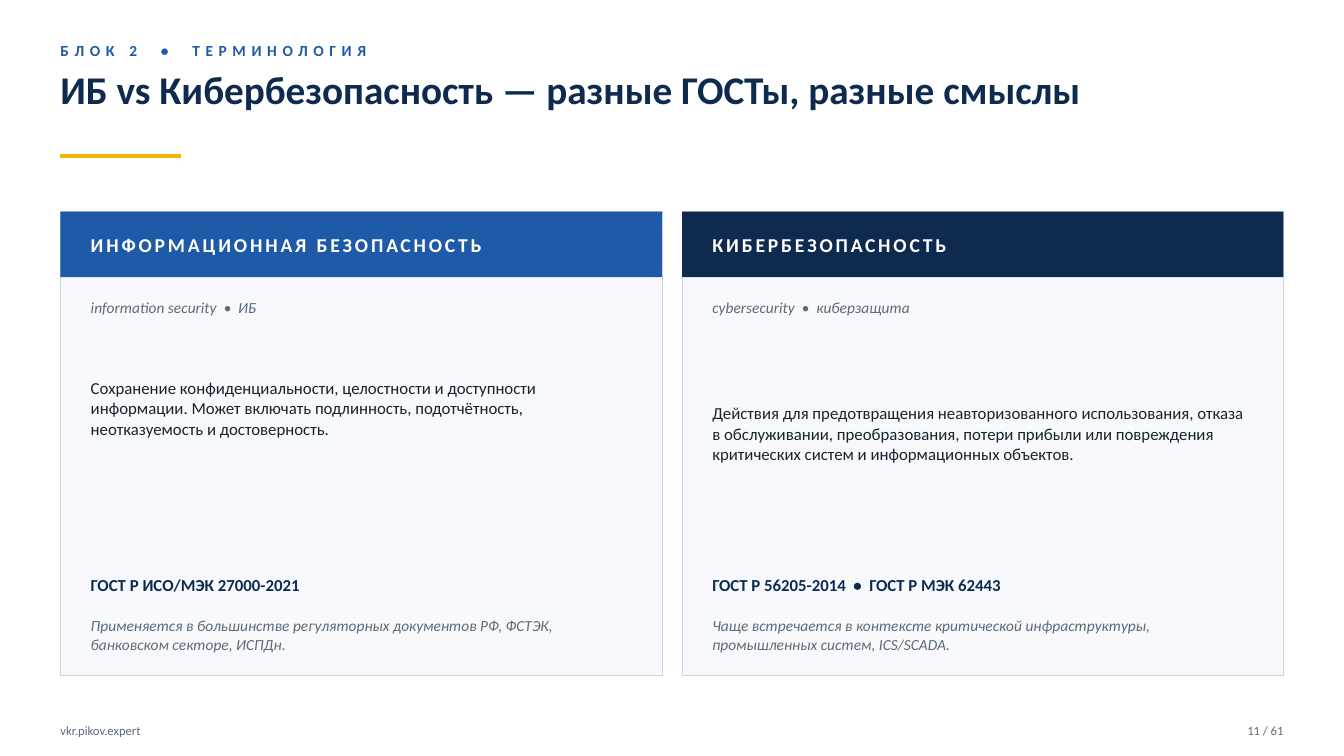
from dataclasses import dataclass

from lxml.etree import SubElement
from pptx import Presentation
from pptx.dml.color import RGBColor
from pptx.enum.shapes import MSO_CONNECTOR, MSO_SHAPE
from pptx.enum.text import MSO_ANCHOR, PP_ALIGN
from pptx.oxml.ns import qn
from pptx.util import Inches, Pt

KICKER = "БЛОК 2  •  ТЕРМИНОЛОГИЯ"
TITLE = "ИБ vs Кибербезопасность — разные ГОСТы, разные смыслы"
SITE = "vkr.pikov.expert"
PAGE = "11 / 61"
TERMS = [
    {
        "name": "ИНФОРМАЦИОННАЯ БЕЗОПАСНОСТЬ",
        "header": "1E5AA7",
        "aliases": "information security  •  ИБ",
        "definition": "Сохранение конфиденциальности, целостности и доступности информации. "
                      "Может включать подлинность, подотчётность, неотказуемость и достоверность.",
        "definition_height": 1.5,
        "standard": "ГОСТ Р ИСО/МЭК 27000-2021",
        "usage": "Применяется в большинстве регуляторных документов РФ, ФСТЭК, "
                 "банковском секторе, ИСПДн.",
    },
    {
        "name": "КИБЕРБЕЗОПАСНОСТЬ",
        "header": "0F2A4F",
        "aliases": "cybersecurity  •  киберзащита",
        "definition": "Действия для предотвращения неавторизованного использования, отказа "
                      "в обслуживании, преобразования, потери прибыли или повреждения "
                      "критических систем и информационных объектов.",
        "definition_height": 2,
        "standard": "ГОСТ Р 56205-2014  •  ГОСТ Р МЭК 62443",
        "usage": "Чаще встречается в контексте критической инфраструктуры, "
                 "промышленных систем, ICS/SCADA.",
    },
]


@dataclass(frozen=True)
class Theme:
    font: str = "Calibri"
    navy: str = "0F2A4F"
    blue: str = "1E5AA7"
    gold: str = "F4B400"
    panel: str = "F7F9FC"
    border: str = "C9D3E0"
    ink: str = "16242F"
    muted: str = "5C6B7A"
    white: str = "FFFFFF"
    title: int = 28
    heading: int = 14
    body: int = 12
    note: int = 11
    footer: int = 9


THEME = Theme()
WIDTH, HEIGHT = 13.33, 7.5
MARGIN, GUTTER, PADDING = 0.6, 0.2, 0.3
CONTENT = WIDTH - 2 * MARGIN
CARD_WIDTH = (CONTENT - GUTTER) / len(TERMS)
CARD_TOP, CARD_HEIGHT, HEADER_HEIGHT = 2.1, 4.6, 0.65
RULE_TOP, RULE_WIDTH = 1.55, 1.2
FOOTER_TOP, FOOTER_HEIGHT = 7.1, 0.3


def add_text(slide, text, left, top, width, height, size, color, bold=False, italic=False,
             tracking=0, anchor=MSO_ANCHOR.MIDDLE, align=PP_ALIGN.LEFT):
    """Place one text run in a box without insets; tracking is in points."""
    box = slide.shapes.add_textbox(Inches(left), Inches(top), Inches(width), Inches(height))
    frame = box.text_frame
    frame.word_wrap = True
    frame.vertical_anchor = anchor
    frame.margin_left = frame.margin_right = frame.margin_top = frame.margin_bottom = 0
    paragraph = frame.paragraphs[0]
    paragraph.alignment = align
    run = paragraph.add_run()
    run.text = text
    run.font.name = THEME.font
    run.font.size = Pt(size)
    run.font.color.rgb = RGBColor.from_string(color)
    run.font.bold = bold
    run.font.italic = italic
    if tracking:
        run.font._element.set("spc", str(tracking * 100))


def add_panel(slide, left, top, width, height, fill, border=None):
    panel = slide.shapes.add_shape(MSO_SHAPE.RECTANGLE, Inches(left), Inches(top),
                                   Inches(width), Inches(height))
    panel.shadow.inherit = False
    panel.fill.solid()
    panel.fill.fore_color.rgb = RGBColor.from_string(fill)
    if border:
        panel.line.color.rgb = RGBColor.from_string(border)
        panel.line.width = Pt(0.5)
    else:
        panel.line.fill.background()


def add_title_rule(slide):
    rule = slide.shapes.add_connector(MSO_CONNECTOR.STRAIGHT, Inches(MARGIN), Inches(RULE_TOP),
                                      Inches(MARGIN + RULE_WIDTH), Inches(RULE_TOP))
    rule.line.color.rgb = RGBColor.from_string(THEME.gold)
    rule.line.width = Pt(3)
    SubElement(rule._element.spPr, qn("a:effectLst"))


def add_term_card(slide, term, left):
    add_panel(slide, left, CARD_TOP, CARD_WIDTH, CARD_HEIGHT, THEME.panel, THEME.border)
    add_panel(slide, left, CARD_TOP, CARD_WIDTH, HEADER_HEIGHT, term["header"])
    note = {"size": THEME.note, "color": THEME.muted, "italic": True}
    rows = [
        ("name", CARD_TOP, HEADER_HEIGHT,
         {"size": THEME.heading, "color": THEME.white, "bold": True, "tracking": 2}),
        ("aliases", 2.85, 0.4, note),
        ("definition", 3.3, term["definition_height"], {"size": THEME.body, "color": THEME.ink}),
        ("standard", 5.6, 0.4, {"size": THEME.body, "color": THEME.navy, "bold": True}),
        ("usage", 6, 0.6, note),
    ]
    for part, top, height, style in rows:
        add_text(slide, term[part], left + PADDING, top, CARD_WIDTH - 2 * PADDING, height, **style)


def main():
    deck = Presentation()
    deck.slide_width, deck.slide_height = Inches(WIDTH), Inches(HEIGHT)
    slide = deck.slides.add_slide(deck.slide_layouts[6])

    add_text(slide, KICKER, MARGIN, 0.35, 6, 0.3, THEME.note, THEME.blue, bold=True, tracking=4)
    add_text(slide, TITLE, MARGIN, 0.65, CONTENT, 0.85, THEME.title, THEME.navy, bold=True,
             anchor=MSO_ANCHOR.TOP)
    add_title_rule(slide)

    for column, term in enumerate(TERMS):
        add_term_card(slide, term, MARGIN + column * (CARD_WIDTH + GUTTER))

    add_text(slide, SITE, MARGIN, FOOTER_TOP, 4, FOOTER_HEIGHT, THEME.footer, THEME.muted)
    add_text(slide, PAGE, WIDTH - MARGIN - 1, FOOTER_TOP, 1, FOOTER_HEIGHT, THEME.footer,
             THEME.muted, align=PP_ALIGN.RIGHT)
    deck.save("out.pptx")


if __name__ == "__main__":
    main()
